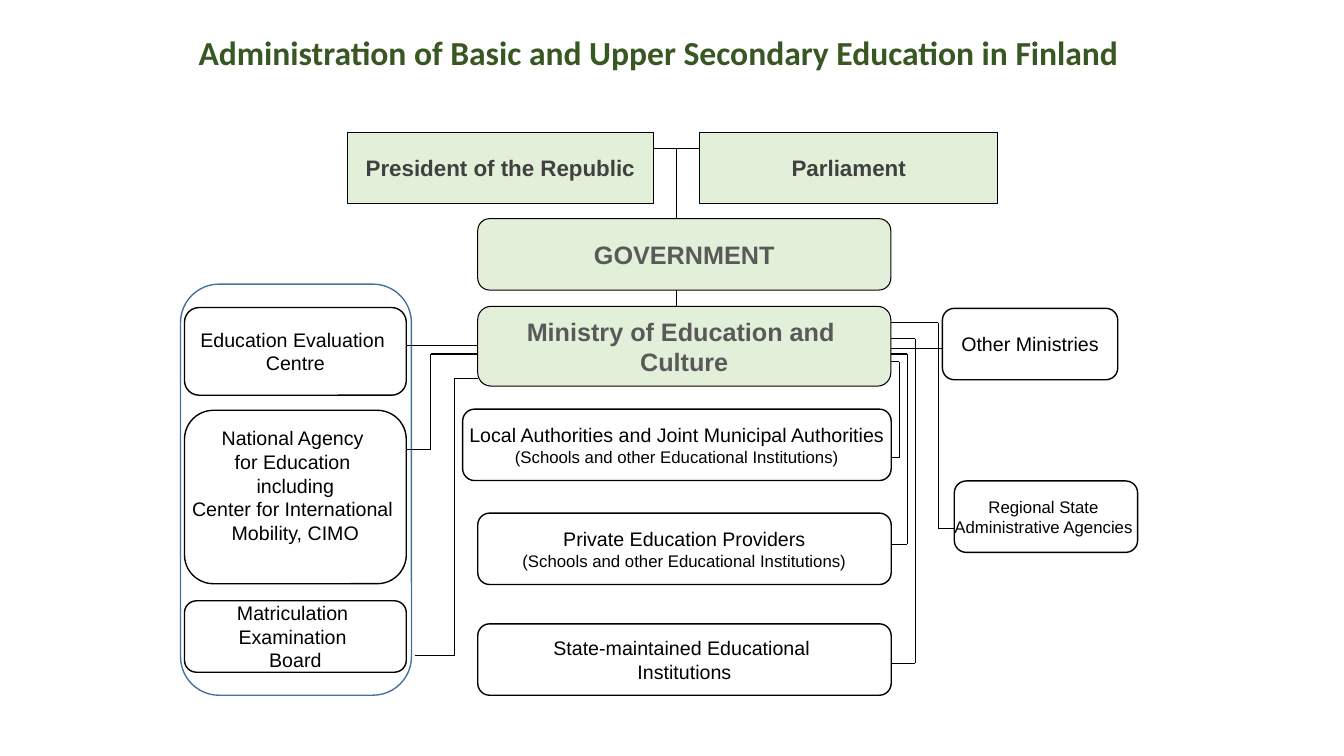
from dataclasses import dataclass

from lxml import etree
from pptx import Presentation
from pptx.dml.color import RGBColor
from pptx.enum import shapes, text
from pptx.oxml import ns
from pptx.util import Cm, Pt


@dataclass(frozen=True)
class Theme:
    title_font: str = "Calibri"
    body_font: str = "Arial"
    title_colour: str = "385723"
    pale_green: str = "E2F0D9"
    white: str = "FFFFFF"
    black: str = "000000"
    dark_grey: str = "404040"
    mid_grey: str = "595959"
    panel_blue: str = "43739E"
    title_size: float = 24
    top_size: float = 18
    head_size: float = 16
    body_size: float = 14
    small_size: float = 12
    thin: float = 0.75
    normal: float = 1


@dataclass(frozen=True)
class Box:
    """A rectangle in centimetres."""
    left: float
    top: float
    width: float
    height: float

    def inside(self, dx, dy, width, height):
        return Box(self.left + dx, self.top + dy, width, height)

    def lengths(self):
        return Cm(self.left), Cm(self.top), Cm(self.width), Cm(self.height)


THEME = Theme()
RECTANGLE = shapes.MSO_SHAPE.RECTANGLE
ROUNDED = shapes.MSO_SHAPE.FLOWCHART_ALTERNATE_PROCESS
PANEL = shapes.MSO_SHAPE.ROUNDED_RECTANGLE
ROW = 1.8  # height of a standard box


def rgb(colour):
    return RGBColor.from_string(colour)


def format_para(para, size, colour, font, bold):
    para.alignment = text.PP_ALIGN.CENTER
    for span in para.runs:
        span.font.name = font
        span.font.size = Pt(size)
        span.font.bold = bold
        span.font.color.rgb = rgb(colour)


def add_outline(page, box, kind, fill, line, weight):
    shape = page.shapes.add_shape(kind, *box.lengths())
    shape.shadow.inherit = False
    if fill:
        shape.fill.solid()
        shape.fill.fore_color.rgb = rgb(fill)
    else:
        shape.fill.background()
    shape.line.color.rgb = rgb(line)
    shape.line.width = Pt(weight)
    return shape


def add_label(page, box, wording, sizes=(THEME.body_size,), kind=ROUNDED,
              fill=THEME.white, colour=THEME.black, bold=False, weight=THEME.normal):
    """Box with centred lines; the last size serves all remaining lines."""
    shape = add_outline(page, box, kind, fill, THEME.black, weight)
    frame = shape.text_frame
    frame.word_wrap = False
    frame.vertical_anchor = text.MSO_ANCHOR.MIDDLE
    frame.text = wording
    for row, para in enumerate(frame.paragraphs):
        size = sizes[min(row, len(sizes) - 1)]
        format_para(para, size, colour, THEME.body_font, bold)
    return shape


def add_route(page, box, *points):
    """Straight lines through points measured from the box corner."""
    for (x1, y1), (x2, y2) in zip(points, points[1:]):
        line = page.shapes.add_connector(
            shapes.MSO_CONNECTOR.STRAIGHT,
            Cm(box.left + x1), Cm(box.top + y1), Cm(box.left + x2), Cm(box.top + y2))
        line.line.color.rgb = rgb(THEME.black)
        line.line.width = Pt(THEME.thin)
        etree.SubElement(line._element.spPr, ns.qn("a:effectLst"))


def place_title(page, box):
    title = page.shapes.title
    title.left, title.top, title.width, title.height = box.lengths()
    frame = title.text_frame
    frame.text = "Administration of Basic and Upper Secondary Education in Finland"
    frame.vertical_anchor = text.MSO_ANCHOR.MIDDLE
    format_para(frame.paragraphs[0], THEME.title_size, THEME.title_colour,
                THEME.title_font, True)


def place_state_bodies(page, box):
    green = dict(fill=THEME.pale_green, bold=True, weight=THEME.thin)
    heads = dict(green, sizes=(THEME.head_size,), kind=RECTANGLE, colour=THEME.dark_grey)
    tops = dict(green, sizes=(THEME.top_size,), colour=THEME.mid_grey)
    add_label(page, box.inside(0, 0, 7.7, ROW), "President of the Republic", **heads)
    add_label(page, box.inside(8.87, 0, 7.52, ROW), "Parliament", **heads)
    add_label(page, box.inside(3.28, 2.18, 10.41, ROW), "GOVERNMENT", **tops)
    add_label(page, box.inside(3.28, 4.39, 10.41, 2.01),
              "Ministry of Education and \nCulture", **tops)
    # Links from both heads down to the ministry
    add_route(page, box, (7.7, 0.4), (8.87, 0.4))
    add_route(page, box, (8.28, 0.4), (8.28, 2.18))
    add_route(page, box, (8.28, 3.98), (8.28, 4.39))


def place_providers(page, box):
    schools = "(Schools and other Educational Institutions)"
    two_sizes = (THEME.body_size, THEME.small_size)
    providers = [
        (0, 0, f"Local Authorities and Joint Municipal Authorities\n{schools}", two_sizes),
        (0.38, 2.62, f"Private Education Providers\n{schools}", two_sizes),
        (0.38, 5.41, "State-maintained Educational \nInstitutions", (THEME.body_size,)),
    ]
    for indent, top, wording, sizes in providers:
        add_label(page, box.inside(indent, top, box.width - indent, ROW), wording, sizes)


def place_agencies(page, box):
    agencies = [
        (0.59, 2.21, "Education Evaluation \nCentre"),
        (3.18, 4.37, "National Agency \nfor Education \nincluding\n"
                     "Center for International \nMobility, CIMO"),
        (7.98, ROW, "Matriculation \nExamination \nBoard"),
    ]
    for top, height, wording in agencies:
        label = add_label(page, box.inside(0.1, top, 5.59, height), wording)
        if wording.startswith("National"):
            label.text_frame.margin_bottom = Cm(0.72)  # lifts the lines
    add_outline(page, box, PANEL, None, THEME.panel_blue, THEME.normal)


def place_partners(page, box):
    add_label(page, box.inside(0, 0, 4.42, ROW), "Other Ministries", fill=None)
    add_label(page, box.inside(0.3, 4.35, 4.62, ROW),
              "Regional State \nAdministrative Agencies ", (THEME.small_size,))


def place_ministry_links(page, box):
    # Left side: agencies
    add_route(page, box, (-1.78, 0.99), (0, 0.99))
    for start, lane, low, high in [(-1.78, -1.19, 3.61, 1.2), (-1.58, -0.58, 8.79, 1.81)]:
        add_route(page, box, (start, low), (lane, low), (lane, high), (0, high))
    # Right side: providers, then partners
    edge = box.width
    lanes = [(0.21, 1.4, 3.81, 0), (0.41, 1.2, 6, 0),
             (0.61, 0.81, 8.99, 0), (1.2, 0.41, 5.59, 1.6)]
    for lane, high, low, end in lanes:
        add_route(page, box, (edge, high), (edge + lane, high),
                  (edge + lane, low), (edge + end, low))
    add_route(page, box, (edge, 1.07), (edge + 1.3, 1.07))


def main():
    deck = Presentation()
    deck.slide_width, deck.slide_height = Cm(33.87), Cm(19.05)
    page = deck.slides.add_slide(deck.slide_layouts[5])
    place_title(page, Box(2.39, 0.56, 28.42, 1.52))
    place_state_bodies(page, Box(8.76, 3.33, 16.39, 6.4))
    place_providers(page, Box(11.66, 10.31, 10.8, 7.21))
    place_agencies(page, Box(4.55, 7.16, 5.82, 10.36))
    place_partners(page, Box(23.75, 7.77, 4.92, 6.15))
    place_ministry_links(page, Box(12.04, 7.72, 10.41, 2.01))
    deck.save("out.pptx")


if __name__ == "__main__":
    main()
